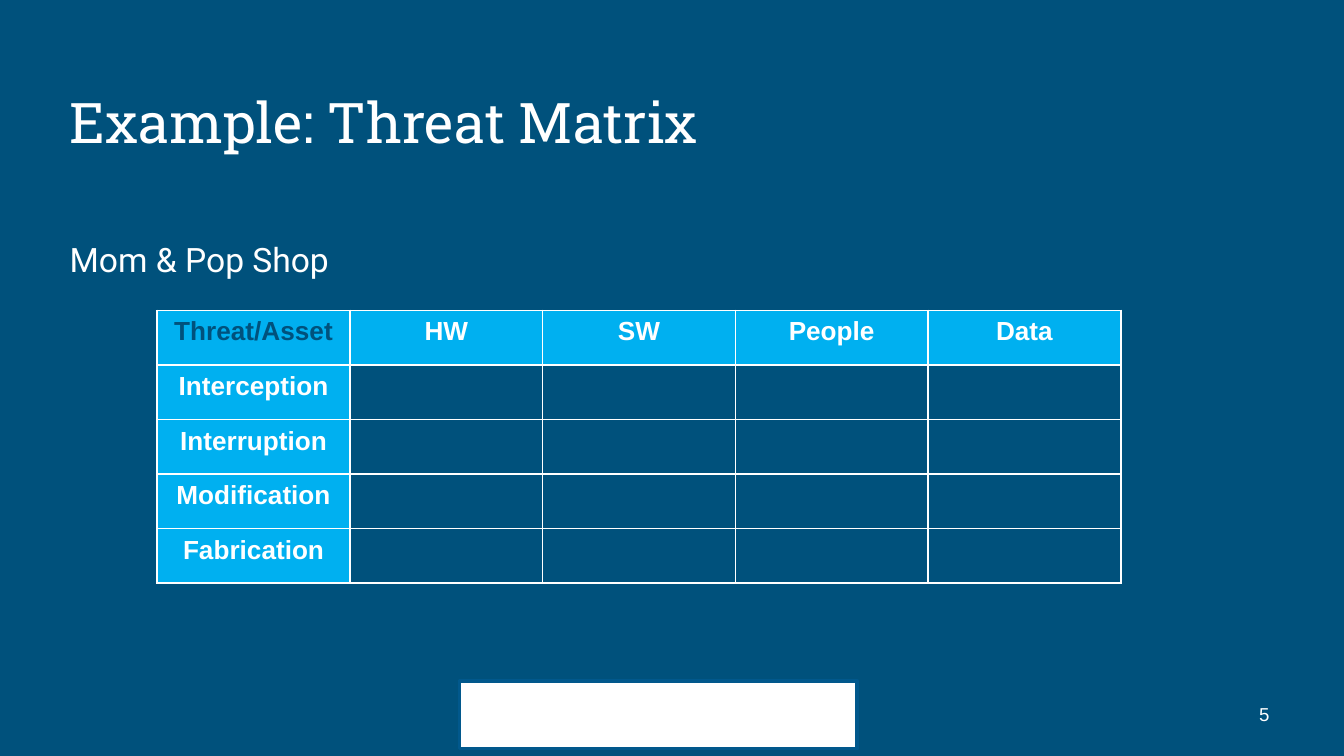
from dataclasses import dataclass

import pptx
import pptx.dml.color
import pptx.enum.shapes
import pptx.enum.text
import pptx.oxml
import pptx.oxml.ns
import pptx.util
from pptx.util import Inches

ALIGN = pptx.enum.text.PP_ALIGN
ANCHOR = pptx.enum.text.MSO_ANCHOR


@dataclass(frozen=True)
class Theme:
    background: str = "00517C"
    accent: str = "00B0F0"
    light: str = "FFFFFF"
    panel_line: str = "01588C"
    title_font: str = "Roboto Slab"
    body_font: str = "Roboto"
    table_font: str = "Arial"
    title_size: int = 30
    body_size: int = 18
    table_size: int = 14
    number_size: int = 10


THEME = Theme()
ASSETS = ["HW", "SW", "People", "Data"]
THREATS = ["Interception", "Interruption", "Modification", "Fabrication"]


def rgb(color):
    return pptx.dml.color.RGBColor.from_string(color)


def write(tf, text, *, font, size, color=THEME.light, bold=False,
          align=ALIGN.LEFT, spacing=None, after=None):
    p = tf.paragraphs[0]
    p.alignment = align
    if spacing:
        p.line_spacing = spacing
    if after:
        p.space_after = pptx.util.Pt(after)
    r = p.add_run()
    r.text = text
    r.font.name = font
    r.font.size = pptx.util.Pt(size)
    r.font.bold = bold
    r.font.color.rgb = rgb(color)


def format_frame(tf, anchor):
    tf.word_wrap = True
    tf.auto_size = pptx.enum.text.MSO_AUTO_SIZE.NONE
    tf.vertical_anchor = anchor
    tf.margin_left = tf.margin_right = Inches(0.1)
    tf.margin_top = tf.margin_bottom = Inches(0.1)


def add_title(s, text, box):
    sp = s.shapes.title
    sp.left, sp.top, sp.width, sp.height = map(Inches, box)
    format_frame(sp.text_frame, ANCHOR.BOTTOM)
    write(sp.text_frame, text, font=THEME.title_font, size=THEME.title_size)


def add_text(s, text, box, anchor=ANCHOR.TOP, **fmt):
    sp = s.shapes.add_textbox(*map(Inches, box))
    format_frame(sp.text_frame, anchor)
    write(sp.text_frame, text, **fmt)


def add_panel(s, box):
    sp = s.shapes.add_shape(pptx.enum.shapes.MSO_SHAPE.RECTANGLE, *map(Inches, box))
    sp.shadow.inherit = False
    sp.fill.solid()
    sp.fill.fore_color.rgb = rgb(THEME.light)
    sp.line.color.rgb = rgb(THEME.panel_line)
    sp.line.width = pptx.util.Pt(2)


def add_borders(cell):
    tc_pr = cell._tc.get_or_add_tcPr()
    for i, side in enumerate(("lnL", "lnR", "lnT", "lnB")):
        # Border lines come before the cell fill
        tc_pr.insert(i, pptx.oxml.parse_xml(
            f'<a:{side} {pptx.oxml.ns.nsdecls("a")} w="{pptx.util.Pt(1)}">'
            f'<a:solidFill><a:srgbClr val="{THEME.light}"/></a:solidFill></a:{side}>'))


def add_matrix(s, corner, columns, rows, box):
    grid = [[corner, *columns]] + [[name] + [""] * len(columns) for name in rows]
    frame = s.shapes.add_table(len(grid), len(grid[0]), *map(Inches, box))
    table = frame.table
    table.first_row = table.horz_banding = False
    for i, row in enumerate(grid):
        for j, text in enumerate(row):
            cell = table.cell(i, j)
            cell.margin_bottom = 0
            if text:
                cell.fill.solid()
                cell.fill.fore_color.rgb = rgb(THEME.accent)
                color = THEME.background if text == corner else THEME.light
                write(cell.text_frame, text, font=THEME.table_font,
                      size=THEME.table_size, color=color, bold=True,
                      align=ALIGN.CENTER)
            else:
                cell.fill.background()
            add_borders(cell)


def main():
    prs = pptx.Presentation()
    # Widescreen, 16:9
    prs.slide_width = Inches(10)
    prs.slide_height = prs.slide_width * 9 // 16
    s = prs.slides.add_slide(prs.slide_layouts[5])
    s.background.fill.solid()
    s.background.fill.fore_color.rgb = rgb(THEME.background)

    # Footer panel
    add_panel(s, (3.42, 5.07, 2.96, 0.5))

    # Heading and subject
    add_title(s, "Example: Threat Matrix", (0.42, 0.5, 9.15, 0.75))
    add_text(s, "Mom & Pop Shop", (0.42, 1.63, 9.15, 3.37),
             font=THEME.body_font, size=THEME.body_size, spacing=1.15, after=16)

    # Slide number
    add_text(s, "5", (9.27, 5.1, 0.6, 0.43), ANCHOR.MIDDLE,
             font=THEME.table_font, size=THEME.number_size)

    # Threats against assets
    add_matrix(s, "Threat/Asset", ASSETS, THREATS, (1.17, 2.31, 7.17, 2.03))

    prs.save("out.pptx")


if __name__ == "__main__":
    main()
